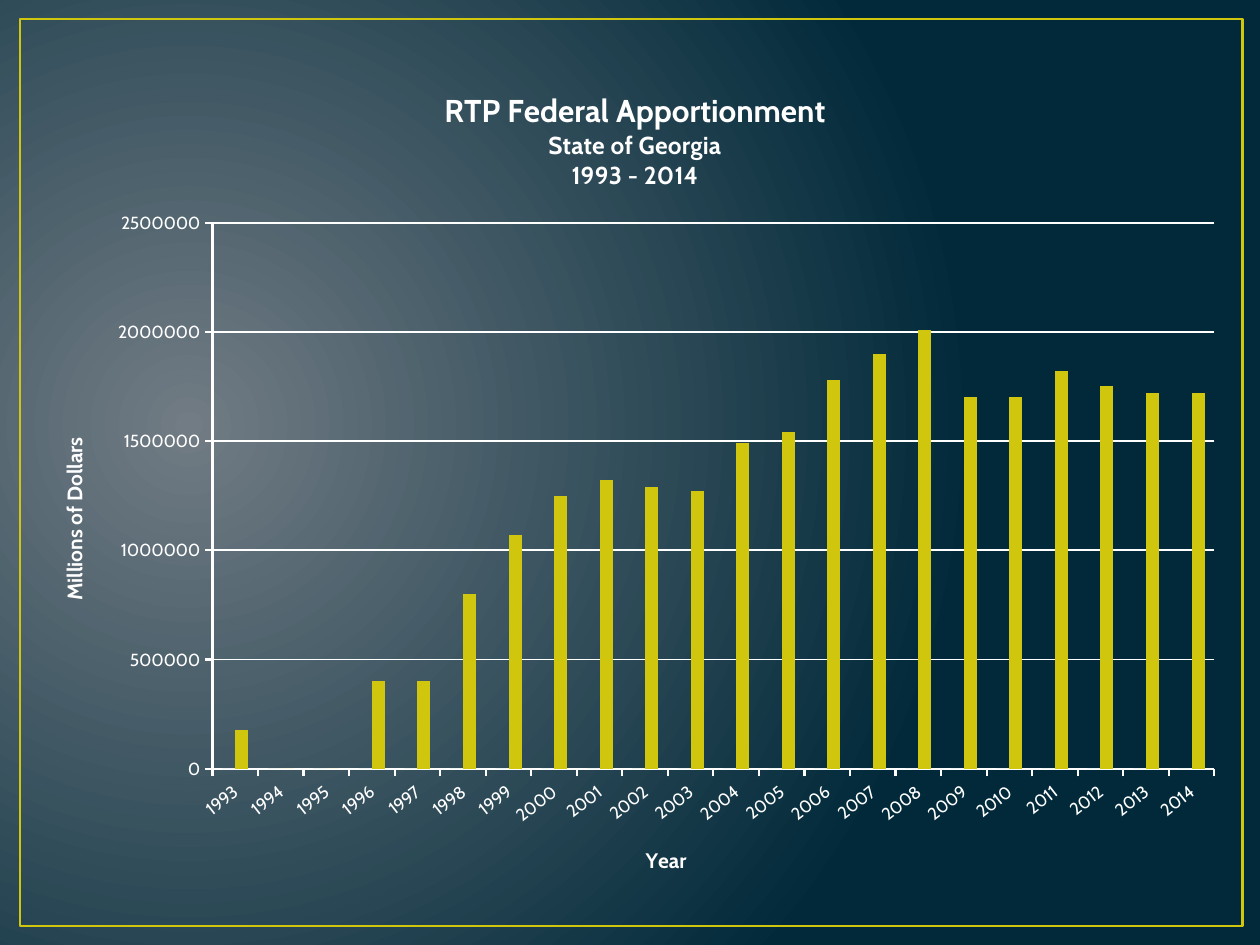
from lxml import etree
from pptx import Presentation
from pptx.chart.data import CategoryChartData
from pptx.dml.color import RGBColor
from pptx.enum.chart import XL_CHART_TYPE as ChartType, XL_TICK_MARK as Tick
from pptx.enum.shapes import MSO_SHAPE as Shape
from pptx.oxml.ns import qn
from pptx.util import Inches, Pt

WHITE, GOLD, STEEL = "FFFFFF", "CFC60D", "759AA5"
GLOW, NAVY = "717C84", "01293A"

YEARS = [str(year) for year in range(1993, 2015)]
APPORTIONMENT = [
    180000, 0, 0, 400000, 400000, 800000, 1070000, 1250000, 1320000, 1290000, 1270000,
    1490000, 1540000, 1780000, 1900000, 2010000, 1700000, 1700000, 1820000, 1750000,
    1720000, 1720000,
]


def color(hex_code):
    return RGBColor.from_string(hex_code)


class SlideBuilder:
    font_name = "Cabin"

    def __init__(self, slide):
        self.slide = slide

    def style(self, font, size, bold=False):
        font.name, font.size, font.bold = self.font_name, Pt(size), bold
        font.color.rgb = color(WHITE)

    def radial_background(self, inner, outer, focus):
        fill = self.slide.background.fill
        fill.gradient()
        for stop, shade, position in zip(fill.gradient_stops, (inner, outer), (0, 1)):
            stop.color.rgb = color(shade)
            stop.position = position
        gradient = next(self.slide.element.iter(qn("a:gradFill")))
        linear = gradient.find(qn("a:lin"))
        radial = etree.Element(qn("a:path"), {"path": "circle"})
        etree.SubElement(radial, qn("a:fillToRect"),
                         {side: str(percent * 1000) for side, percent in zip("ltrb", focus)})
        gradient.replace(linear, radial)

    def frame(self, left, top, width, height):
        border = self.slide.shapes.add_shape(
            Shape.RECTANGLE, Inches(left), Inches(top), Inches(width), Inches(height))
        border.shadow.inherit = False
        border.fill.background()
        border.line.color.rgb = color(GOLD)
        border.line.width = Pt(1.5)

    def titles(self, text_frame, lines):
        for index, (text, size) in enumerate(lines):
            line = text_frame.paragraphs[0] if index == 0 else text_frame.add_paragraph()
            line.text = text
            self.style(line.font, size, bold=True)

    def axis(self, axis, title):
        axis.has_title = True
        self.titles(axis.axis_title.text_frame, [(title, 12)])
        axis.major_tick_mark, axis.minor_tick_mark = Tick.OUTSIDE, Tick.NONE
        self.style(axis.tick_labels.font, 10)
        self.white_line(axis.format.line, 1.25)

    def white_line(self, line, width):
        line.color.rgb = color(WHITE)
        line.width = Pt(width)

    def plot_area(self, chart, **fractions):
        plot_area = next(chart.element.iter(qn("c:plotArea")))
        layout = plot_area.find(qn("c:layout"))
        if layout is None:
            layout = etree.Element(qn("c:layout"))
            plot_area.insert(0, layout)
        manual = etree.SubElement(layout, qn("c:manualLayout"))
        settings = {"layoutTarget": "inner", "xMode": "edge", "yMode": "edge", **fractions}
        for tag, value in settings.items():
            etree.SubElement(manual, qn(f"c:{tag}"), val=str(value))

    def column_chart(self, left, top, width, height, years, series, title_lines):
        data = CategoryChartData()
        data.categories = years
        for name, values, _ in series:
            data.add_series(name, values)
        chart = self.slide.shapes.add_chart(
            ChartType.COLUMN_CLUSTERED, Inches(left), Inches(top), Inches(width),
            Inches(height), data).chart
        self.style(chart.font, 10)
        chart.has_legend = False
        chart.has_title = True
        self.titles(chart.chart_title.text_frame, title_lines)
        chart.chart_title.include_in_layout = False

        # Columns
        plot = chart.plots[0]
        plot.gap_width, plot.overlap = 150, 0
        plot.vary_by_categories = False
        for columns, (_, _, shade) in zip(plot.series, series):
            columns.format.fill.solid()
            columns.format.fill.fore_color.rgb = color(shade)

        # Axes
        year_axis, dollar_axis = chart.category_axis, chart.value_axis
        self.axis(year_axis, "Year")
        self.axis(dollar_axis, "Millions of Dollars")
        dollar_axis.minimum_scale, dollar_axis.maximum_scale = 0, 2500000
        dollar_axis.major_unit = 500000
        dollar_axis.tick_labels.number_format = "General"
        dollar_axis.tick_labels.number_format_is_linked = False
        dollar_axis.has_major_gridlines = True
        self.white_line(dollar_axis.major_gridlines.format.line, 1)

        # Slanted year labels
        label_body = year_axis._element.find(qn("c:txPr")).find(qn("a:bodyPr"))
        label_body.set("rot", str(-38 * 60000))
        label_body.set("vert", "horz")
        return chart


def main():
    presentation = Presentation()
    presentation.slide_width, presentation.slide_height = Inches(10), Inches(7.5)
    builder = SlideBuilder(presentation.slides.add_slide(presentation.slide_layouts[6]))

    # Backdrop
    builder.radial_background(GLOW, NAVY, focus=(15, 50, 85, 60))
    builder.frame(0.16, 0.15, 9.7, 7.2)

    # Apportionment by year
    chart = builder.column_chart(
        0.25, 0.5, 9.58, 6.67, YEARS,
        series=[("Series 1", [0] * len(YEARS), STEEL), ("Series 2", APPORTIONMENT, GOLD)],
        title_lines=[("RTP Federal Apportionment", 18), ("State of Georgia", 14),
                     ("1993 - 2014", 14)])
    builder.plot_area(chart, x=0.15, y=0.19, w=0.83, h=0.65)

    presentation.save("out.pptx")


if __name__ == "__main__":
    main()
